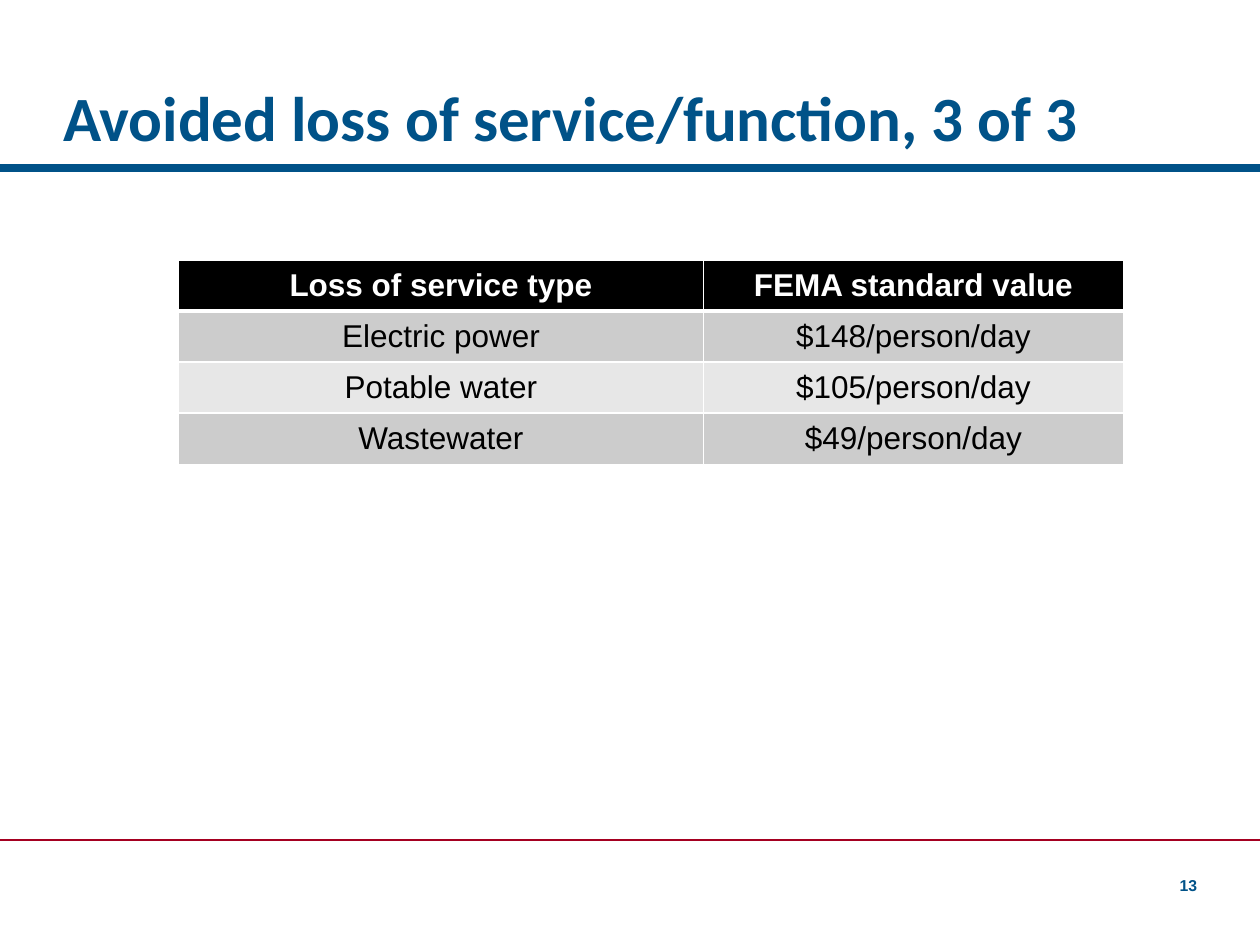
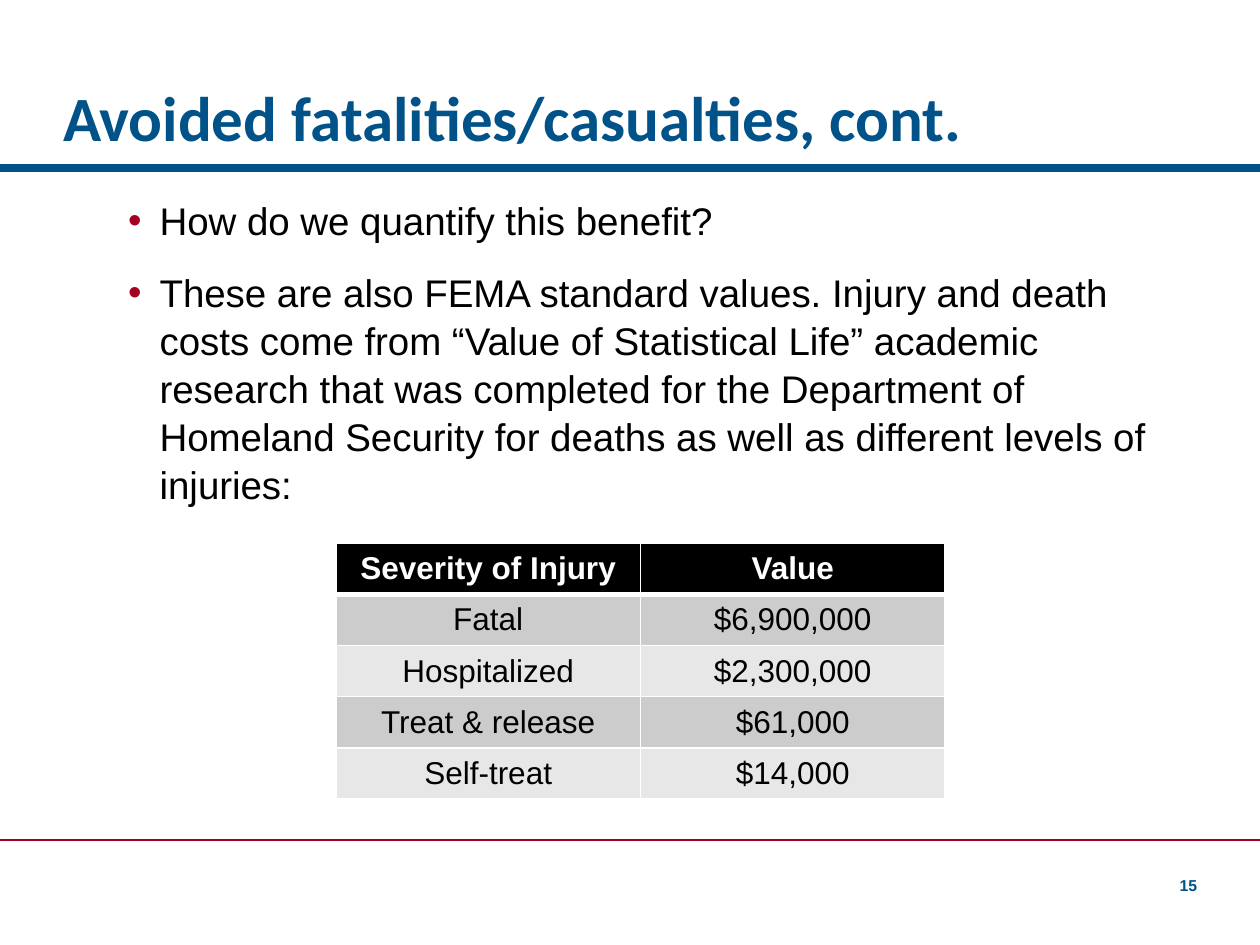
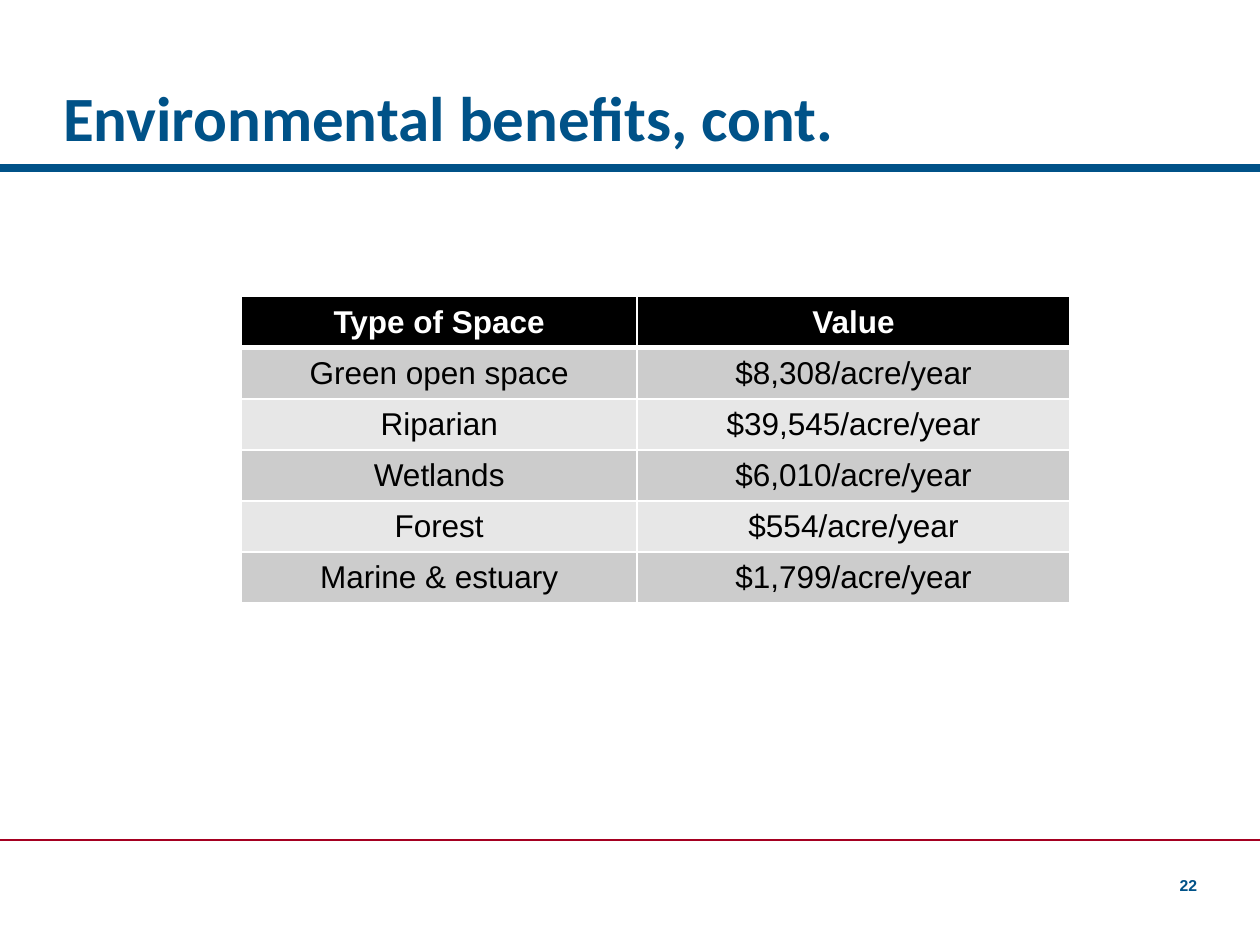
"""Build three slides of benefit values, each a titled table."""
import pptx
import pptx.util
import pptx.dml.color
import pptx.enum.shapes
import pptx.enum.text
import pptx.oxml
import pptx.oxml.ns
from dataclasses import dataclass

Pt = pptx.util.Pt
qn = pptx.oxml.ns.qn
PP_ALIGN = pptx.enum.text.PP_ALIGN
ANCHOR = pptx.enum.text.MSO_ANCHOR
AUTO_SIZE = pptx.enum.text.MSO_AUTO_SIZE

SLIDES = [
    {
        "number": "13",
        "title": "Avoided loss of service/function, 3 of 3",
        "bullets": [],
        "table_at": (102, 148.5),
        "columns": (300, 240),
        "rows": [
            ("Loss of service type", "FEMA standard value"),
            ("Electric power", "$148/person/day"),
            ("Potable water", "$105/person/day"),
            ("Wastewater", "$49/person/day"),
        ],
    },
    {
        "number": "15",
        "title": "Avoided fatalities/casualties, cont.",
        "bullets": [
            "How do we quantify this benefit?",
            "These are also FEMA standard values. Injury and death costs come from "
            "“Value of Statistical Life” academic research that was completed for the "
            "Department of Homeland Security for deaths as well as different levels of "
            "injuries:",
        ],
        "table_at": (192, 310.5),
        "columns": (174, 174),
        "rows": [
            ("Severity of Injury", "Value"),
            ("Fatal", "$6,900,000"),
            ("Hospitalized", "$2,300,000"),
            ("Treat & release", "$61,000"),
            ("Self-treat", "$14,000"),
        ],
    },
    {
        "number": "22",
        "title": "Environmental benefits, cont.",
        "bullets": [],
        "table_at": (138, 169.5),
        "columns": (226, 247.5),
        "rows": [
            ("Type of Space", "Value"),
            ("Green open space", "$8,308/acre/year"),
            ("Riparian", "$39,545/acre/year"),
            ("Wetlands", "$6,010/acre/year"),
            ("Forest", "$554/acre/year"),
            ("Marine & estuary", "$1,799/acre/year"),
        ],
    },
]


@dataclass(frozen=True)
class Theme:
    blue: str = "005288"
    red: str = "A50021"
    black: str = "000000"
    white: str = "FFFFFF"
    bands: tuple = ("CCCCCC", "E7E7E7")
    title_font: str = "Calibri"
    body_font: str = "Arial"
    title_size: float = 36
    body_size: float = 22
    table_size: float = 18
    number_size: float = 9


THEME = Theme()
WIDTH, HEIGHT = 720, 540
ROW_HEIGHT = 29.2
RULES = [(96, THEME.blue, 4.5), (480, THEME.red, 1.5)]


def rgb(color):
    return pptx.dml.color.RGBColor.from_string(color)


def place(sp, left, top, width, height):
    sp.left, sp.top, sp.width, sp.height = map(Pt, (left, top, width, height))


def set_insets(tf, left, right):
    tf.margin_left, tf.margin_right = Pt(left), Pt(right)
    tf.margin_top = tf.margin_bottom = Pt(3.6)


def style(p, size, color, bold=False, font=THEME.body_font, align=PP_ALIGN.LEFT):
    p.alignment = align
    for r in p.runs:
        r.font.name, r.font.size, r.font.bold = font, Pt(size), bold
        r.font.color.rgb = rgb(color)


def add_rule(slide, y, color, weight):
    line = slide.shapes.add_connector(
        pptx.enum.shapes.MSO_CONNECTOR.STRAIGHT, 0, Pt(y), Pt(WIDTH), Pt(y))
    line.line.color.rgb = rgb(color)
    line.line.width = Pt(weight)
    pptx.oxml.ns.qn
    line._element.spPr.append(pptx.oxml.parse_xml(
        '<a:effectLst xmlns:a="http://schemas.openxmlformats.org/drawingml/2006/main"/>'))


def add_title(slide, text):
    sp = slide.shapes.title
    place(sp, 36, 0, 648, 92)
    tf = sp.text_frame
    tf.text = text
    tf.auto_size = AUTO_SIZE.NONE
    tf.vertical_anchor = ANCHOR.BOTTOM
    set_insets(tf, 0, 7.2)
    tf.paragraphs[0].line_spacing = 0.9
    style(tf.paragraphs[0], THEME.title_size, THEME.blue, True, THEME.title_font)


def add_bullets(slide, bullets):
    sp = slide.placeholders[1]
    place(sp, 66, 108, 618, 162)
    tf = sp.text_frame
    tf.text = "\n".join(bullets)
    tf.auto_size = AUTO_SIZE.NONE
    for p in tf.paragraphs:
        p.space_before, p.line_spacing = Pt(13.5), 1.04
        style(p, THEME.body_size, THEME.black)
        pPr = p._p.get_or_add_pPr()
        pPr.set("marL", str(Pt(18)))
        pPr.set("indent", str(Pt(-18)))
        color = pPr.makeelement(qn("a:buClr"), {})
        color.append(color.makeelement(qn("a:srgbClr"), {"val": THEME.red}))
        pPr.append(color)
        pPr.append(pPr.makeelement(qn("a:buFont"), {"typeface": THEME.body_font}))
        pPr.append(pPr.makeelement(qn("a:buChar"), {"char": "•"}))


def set_borders(cell, top, bottom):
    tcPr = cell._tc.get_or_add_tcPr()
    for side, weight in (("L", 1), ("R", 1), ("T", top), ("B", bottom)):
        ln = tcPr.makeelement(qn(f"a:ln{side}"), {"w": str(Pt(weight))})
        fill = ln.makeelement(qn("a:solidFill"), {})
        fill.append(fill.makeelement(qn("a:srgbClr"), {"val": THEME.white}))
        ln.append(fill)
        tcPr.append(ln)


def add_value_table(slide, at, columns, rows):
    left, top = at
    table = slide.shapes.add_table(
        len(rows), len(columns), Pt(left), Pt(top),
        Pt(sum(columns)), Pt(ROW_HEIGHT * len(rows))).table
    for column, width in zip(table.columns, columns):
        column.width = Pt(width)
    for i, row in enumerate(rows):
        table.rows[i].height = Pt(ROW_HEIGHT)
        header = i == 0
        for j, text in enumerate(row):
            cell = table.cell(i, j)
            cell.text_frame.text = text
            cell.vertical_anchor = ANCHOR.MIDDLE
            set_borders(cell, 3 if i == 1 else 1, 3 if header else 1)
            cell.fill.solid()
            cell.fill.fore_color.rgb = rgb(
                THEME.black if header else THEME.bands[(i - 1) % 2])
            style(cell.text_frame.paragraphs[0], THEME.table_size,
                  THEME.white if header else THEME.black, header,
                  align=PP_ALIGN.CENTER)


def add_number(slide, number):
    tf = slide.shapes.add_textbox(Pt(660), Pt(497), Pt(24), Pt(18)).text_frame
    tf.text = number
    tf.word_wrap = True
    tf.auto_size = AUTO_SIZE.SHAPE_TO_FIT_TEXT
    tf.vertical_anchor = ANCHOR.BOTTOM
    set_insets(tf, 0, 0)
    style(tf.paragraphs[0], THEME.number_size, THEME.blue, True, align=PP_ALIGN.RIGHT)


def main():
    prs = pptx.Presentation()
    prs.slide_width, prs.slide_height = Pt(WIDTH), Pt(HEIGHT)
    for content in SLIDES:
        layout = "Title and Content" if content["bullets"] else "Title Only"
        slide = prs.slides.add_slide(prs.slide_layouts.get_by_name(layout))
        for rule in RULES:
            add_rule(slide, *rule)
        add_title(slide, content["title"])
        if content["bullets"]:
            add_bullets(slide, content["bullets"])
        add_value_table(slide, content["table_at"], content["columns"], content["rows"])
        add_number(slide, content["number"])
    prs.save("out.pptx")


if __name__ == "__main__":
    main()
